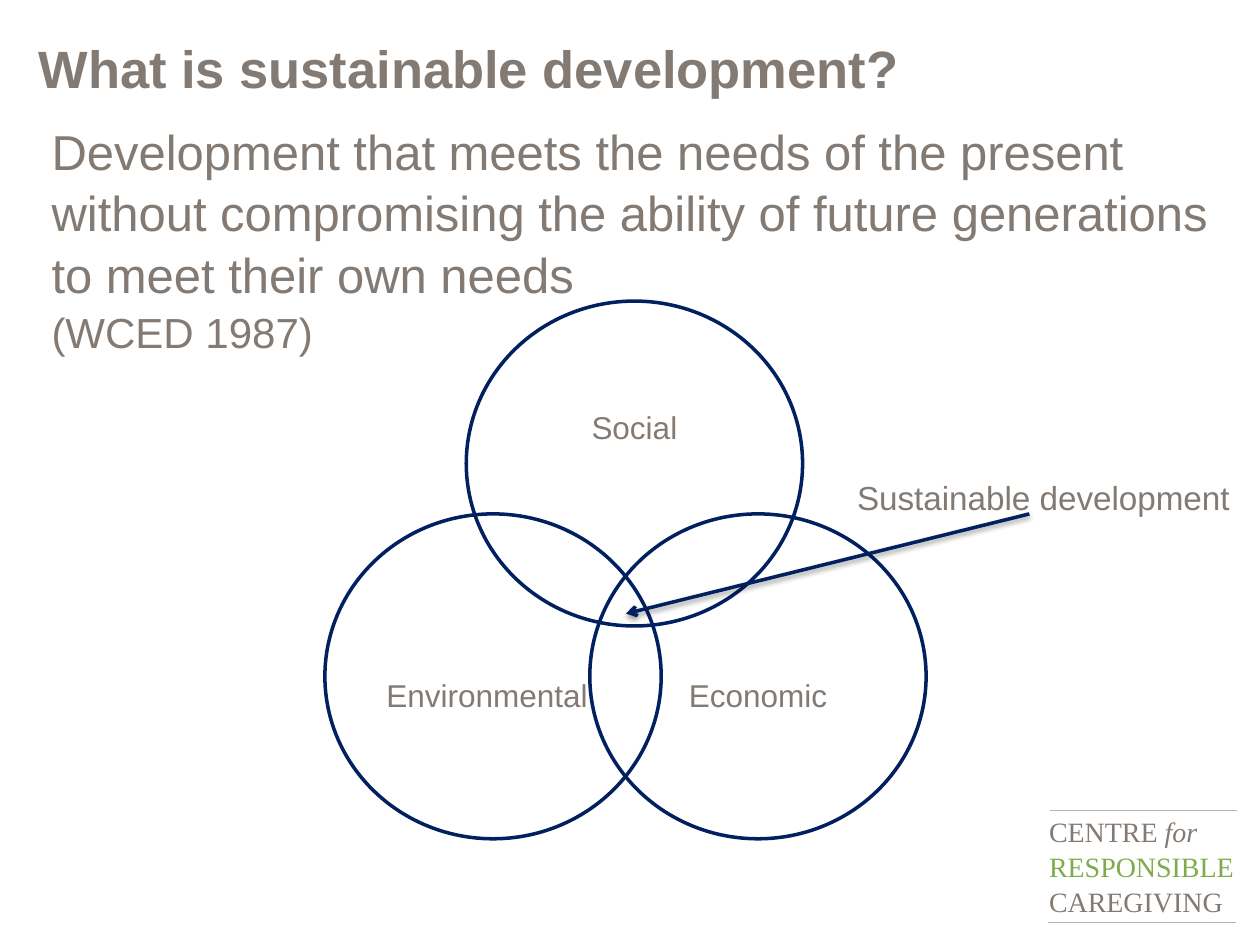
from lxml import etree
from pptx import Presentation
from pptx.dml.color import RGBColor
from pptx.enum.shapes import MSO_CONNECTOR, MSO_SHAPE
from pptx.enum.text import MSO_ANCHOR, MSO_AUTO_SIZE, PP_ALIGN
from pptx.oxml import parse_xml
from pptx.oxml.ns import nsdecls, qn
from pptx.util import Cm, Pt

LEFT, CENTER = PP_ALIGN.LEFT, PP_ALIGN.CENTER
TOP, MIDDLE = MSO_ANCHOR.TOP, MSO_ANCHOR.MIDDLE
TAUPE = RGBColor(0x83, 0x7A, 0x73)
GREEN = RGBColor(0x7F, 0xAC, 0x4A)
NAVY = RGBColor(0x00, 0x20, 0x60)
RULE = RGBColor(0xBE, 0xB3, 0xAE)
WHITE = RGBColor(0xFF, 0xFF, 0xFF)

# Content: each paragraph is a list of (text, font format) runs
TITLE = [[("What is sustainable development?", {"size": Pt(30), "bold": True})]]
DEFINITION = [
    [("Development that meets the needs of the present without compromising "
      "the ability of future generations to meet their own needs", {"size": Pt(28)})],
    [("(WCED 1987)", {"size": Pt(24)})],
]
CALLOUT = [[("Sustainable development", {"size": Pt(19)})]]
SERIF = {"size": Pt(16), "name": "Times New Roman"}
SIGNATURE = [
    [("CENTRE ", SERIF), ("for", {**SERIF, "italic": True})],
    [("RESPONSIBLE", {**SERIF, "color": GREEN})],
    [("CAREGIVING", SERIF)],
]

# Circles: label, left, top, fill, alignment, text insets (cm)
CIRCLE_W, CIRCLE_H = 6.78, 6.55
LOWER_TOP = 10.36
CIRCLES = [
    ("Social", 9.4, 6.07, WHITE, CENTER, {"margin_bottom": 1.59}),
    ("Environmental", 6.55, LOWER_TOP, None, LEFT, {"margin_top": 0.86}),
    ("Economic", 11.89, LOWER_TOP, None, CENTER, {"margin_top": 0.86}),
]

# Text boxes: paragraphs, position (cm), layout
TEXT_BOXES = [
    (SIGNATURE, (20.9, 16.33, 4.6, 2.24), {"anchor": MIDDLE, "spacing": 1.05}),
    (TITLE, (0.53, -0.64, 25.15, 4.01), {"anchor": MIDDLE}),
    (DEFINITION, (0.79, 2.26, 24.61, 4.88), {"spacing": 1.05}),
    (CALLOUT, (16.97, 9.5, 8.13, 1.07), {"align": CENTER, "wrap": False}),
]
SIGNATURE_RULES = [(21.16, 16.33), (21.13, 18.59)]
RULE_LENGTH = 3.78
ARROW = (20.75, 10.36, 12.62, 12.37)

SHADOW = (f'<a:effectLst {nsdecls("a")}><a:outerShdw blurRad="40000" dist="20000" '
          'dir="5400000" rotWithShape="0"><a:srgbClr val="000000">'
          '<a:alpha val="38000"/></a:srgbClr></a:outerShdw></a:effectLst>')
NO_EFFECT = f'<a:effectLst {nsdecls("a")}/>'


def write(tf, paragraphs, align=LEFT, anchor=TOP, wrap=True, spacing=1.0):
    tf.word_wrap = wrap
    tf.auto_size = MSO_AUTO_SIZE.NONE
    tf.vertical_anchor = anchor
    for i, runs in enumerate(paragraphs):
        p = tf.paragraphs[0] if i == 0 else tf.add_paragraph()
        p.alignment, p.line_spacing = align, spacing
        for text, fmt in runs:
            r = p.add_run()
            r.text = text
            fmt = {"name": "Arial", "color": TAUPE, **fmt}
            r.font.color.rgb = fmt.pop("color")
            for key, value in fmt.items():
                setattr(r.font, key, value)


def add_line(s, ends, color, width, effect=NO_EFFECT):
    line = s.shapes.add_connector(MSO_CONNECTOR.STRAIGHT, *map(Cm, ends))
    line.line.color.rgb, line.line.width = color, Pt(width)
    line._element.spPr.append(parse_xml(effect))
    return line


def add_circle(s, label, left, top, fill, align, insets):
    sp = s.shapes.add_shape(MSO_SHAPE.OVAL, *map(Cm, (left, top, CIRCLE_W, CIRCLE_H)))
    sp.shadow.inherit = False
    sp.line.color.rgb, sp.line.width = NAVY, Pt(2)
    if fill is None:
        sp.fill.background()
    else:
        sp.fill.solid()
        sp.fill.fore_color.rgb = fill
    for key, value in insets.items():
        setattr(sp.text_frame, key, Cm(value))
    write(sp.text_frame, [[(label, {"size": Pt(18)})]], align, MIDDLE)


def main():
    prs = Presentation()
    prs.slide_width, prs.slide_height = Cm(25.4), Cm(19.05)
    s = prs.slides.add_slide(prs.slide_layouts[6])

    # Overlapping circles
    for circle in CIRCLES:
        add_circle(s, *circle)

    # Title, definition, callout and signature
    for paragraphs, box, layout in TEXT_BOXES:
        tf = s.shapes.add_textbox(*map(Cm, box)).text_frame
        write(tf, paragraphs, **layout)
    for x, y in SIGNATURE_RULES:
        add_line(s, (x, y, x + RULE_LENGTH, y), RULE, 0.5)

    # Arrow to the shared centre
    arrow = add_line(s, ARROW, NAVY, 2, SHADOW)
    etree.SubElement(arrow.line._get_or_add_ln(), qn("a:tailEnd"), type="arrow")

    prs.save("out.pptx")


if __name__ == "__main__":
    main()
